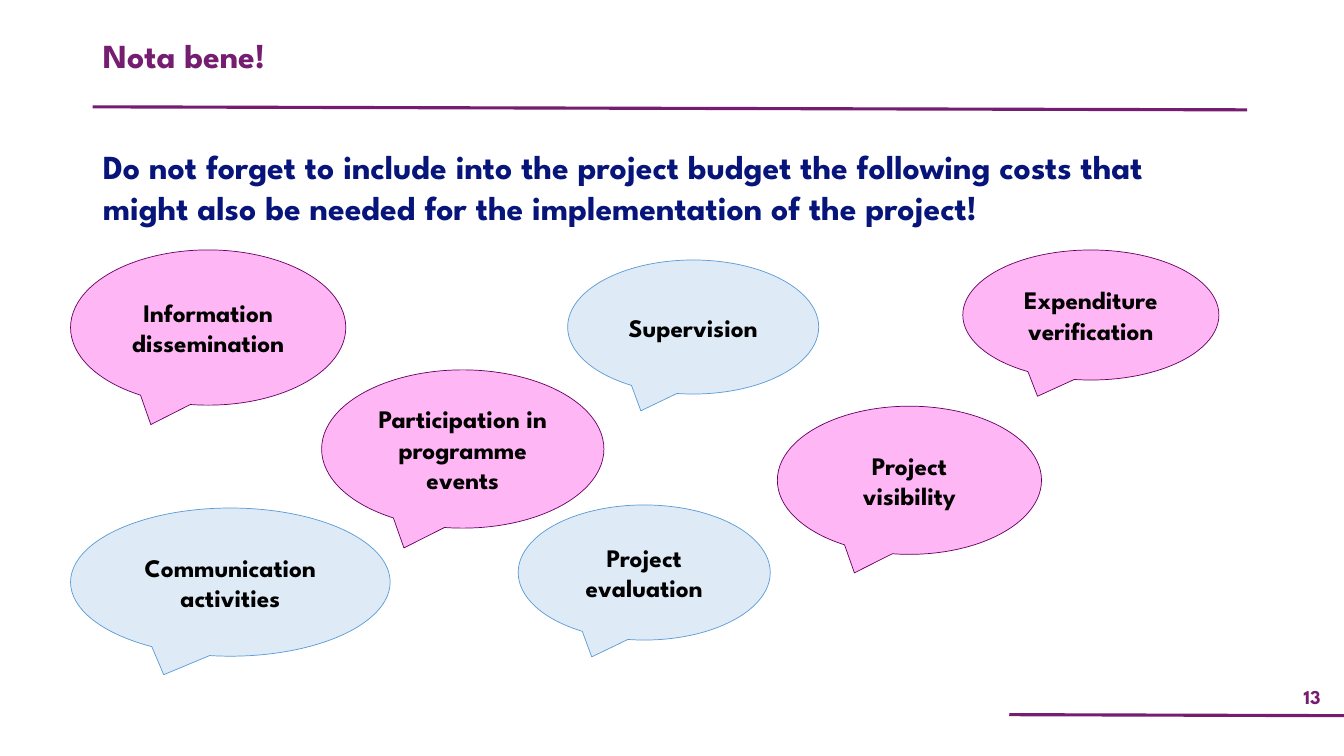
from lxml.etree import SubElement
from pptx import Presentation
from pptx.dml.color import RGBColor
from pptx.enum.shapes import MSO_CONNECTOR, MSO_SHAPE
from pptx.enum.text import MSO_ANCHOR, MSO_AUTO_SIZE, PP_ALIGN
from pptx.oxml.ns import qn
from pptx.util import Inches, Pt

FONT = "League Spartan"
COLORS = {
    "purple": "751D70",
    "navy": "07147A",
    "black": "000000",
    "pink": "FFB6F4",
    "pink_edge": "660066",
    "blue": "DEEBF7",
    "blue_edge": "5B9BD5",
}

HEADING = "Nota bene!"
REMINDER = (
    "Do not forget to include into the project budget the following costs that "
    "might also be needed for the implementation of the project!"
)
PAGE_NUMBER = "13"

# Cost, tint, (left, top, width, height)
COSTS = [
    ("Information dissemination", "pink", (0.7, 2.48, 2.73, 1.54)),
    ("Expenditure verification", "pink", (9.55, 2.48, 2.54, 1.29)),
    ("Supervision", "blue", (5.63, 2.58, 2.49, 1.33)),
    ("Participation in programme events", "pink", (3.19, 3.67, 2.8, 1.57)),
    ("Communication activities", "blue", (0.7, 5.04, 3.17, 1.47)),
    ("Project evaluation", "blue", (5.14, 5.01, 2.5, 1.34)),
    ("Project visibility", "pink", (7.71, 4.03, 2.62, 1.47)),
]
# Start x, start y, end x, end y
RULES = [(0.92, 1.06, 12.37, 1.09), (10.01, 7.09, 13.35, 7.1)]


def color(name):
    return RGBColor.from_string(COLORS[name])


def place(shape, box):
    shape.left, shape.top, shape.width, shape.height = map(Inches, box)


def write(shape, text, size, tint, align, anchor):
    frame = shape.text_frame
    frame.word_wrap = True
    frame.auto_size = MSO_AUTO_SIZE.NONE
    frame.vertical_anchor = anchor
    paragraph = frame.paragraphs[0]
    paragraph.alignment = align
    paragraph.space_before = Pt(0)
    run = paragraph.add_run()
    run.text = text
    run.font.name = FONT
    run.font.size = Pt(size)
    run.font.bold = True
    run.font.color.rgb = color(tint)
    return paragraph


def remove_bullet(paragraph):
    properties = paragraph._p.get_or_add_pPr()
    properties.set("marL", "0")
    properties.set("indent", "0")
    SubElement(properties, qn("a:buNone"))


def add_rule(slide, ends):
    rule = slide.shapes.add_connector(MSO_CONNECTOR.STRAIGHT, *map(Inches, ends))
    rule.line.color.rgb = color("purple")
    rule.line.width = Pt(2.25)
    SubElement(rule._element.spPr, qn("a:effectLst"))


def add_cost(slide, cost, tint, box):
    bubble = slide.shapes.add_shape(
        MSO_SHAPE.OVAL_CALLOUT, *map(Inches, box))
    bubble.shadow.inherit = False
    bubble.fill.solid()
    bubble.fill.fore_color.rgb = color(tint)
    bubble.line.color.rgb = color(f"{tint}_edge")
    bubble.line.width = Pt(0.5)
    write(bubble, cost, 18, "black", PP_ALIGN.CENTER, MSO_ANCHOR.MIDDLE)


def main():
    deck = Presentation()
    deck.slide_width, deck.slide_height = Inches(13.33), Inches(7.5)
    slide = deck.slides.add_slide(deck.slide_layouts[1])

    heading, reminder = slide.placeholders
    place(heading, (0.92, 0.34, 9.73, 0.65))
    heading_line = write(
        heading, HEADING, 24, "purple", PP_ALIGN.JUSTIFY, MSO_ANCHOR.TOP)
    heading_line.line_spacing = 0.9

    place(reminder, (0.92, 1.4, 11.44, 0.91))
    remove_bullet(write(
        reminder, REMINDER, 24, "navy", PP_ALIGN.LEFT, MSO_ANCHOR.TOP))

    for ends in RULES:
        add_rule(slide, ends)
    for cost in COSTS:
        add_cost(slide, *cost)

    page = slide.shapes.add_textbox(*map(Inches, (12.7, 6.73, 0.63, 0.36)))
    write(page, PAGE_NUMBER, 14, "purple", PP_ALIGN.CENTER, MSO_ANCHOR.MIDDLE)

    deck.save("out.pptx")


if __name__ == "__main__":
    main()
